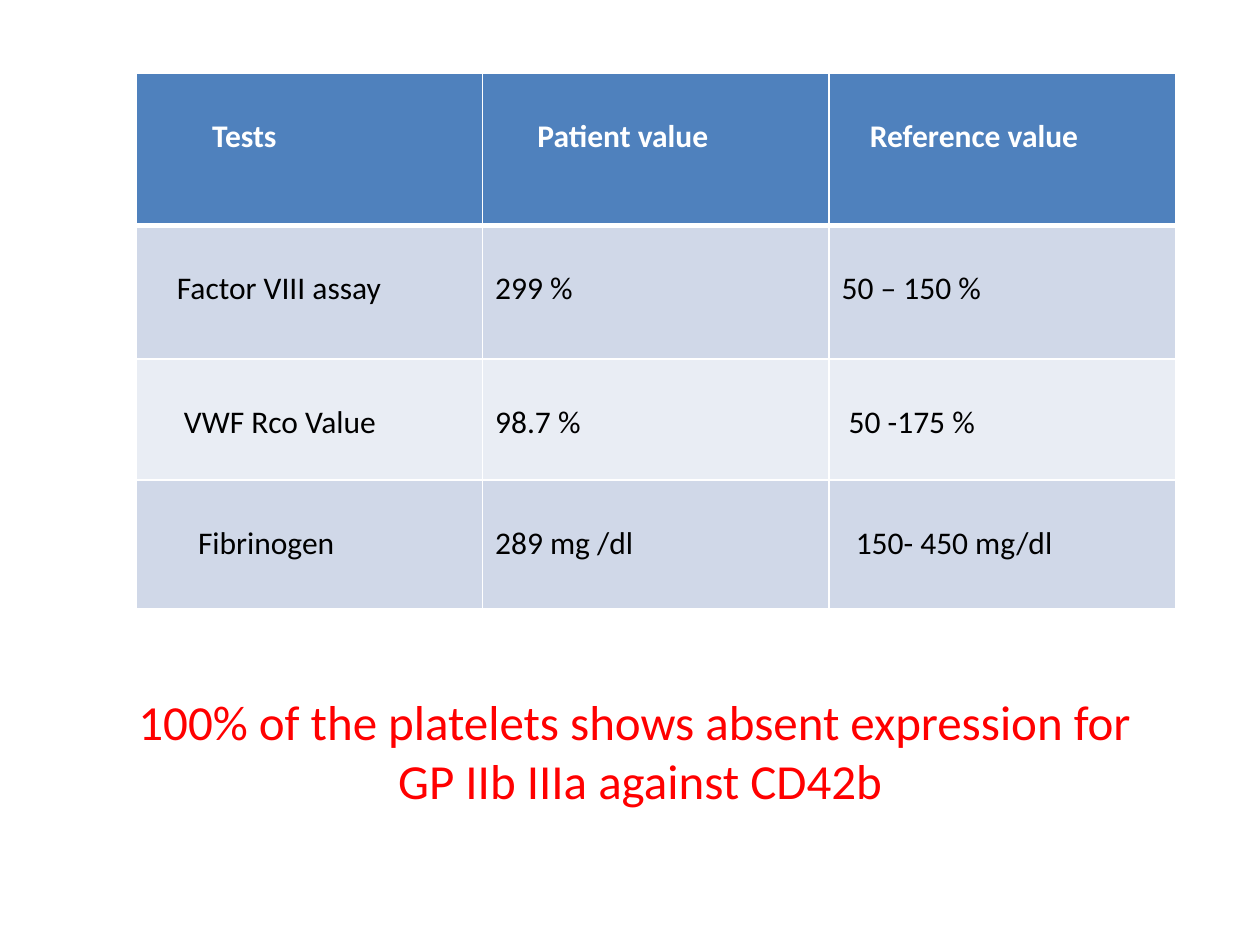
from lxml import etree
from pptx import Presentation
from pptx.dml.color import RGBColor
from pptx.enum.text import MSO_ANCHOR, PP_ALIGN
from pptx.oxml.ns import qn
from pptx.util import Inches, Pt

CENTER, MIDDLE = PP_ALIGN.CENTER, MSO_ANCHOR.MIDDLE
FONT = "Calibri"
TITLE_ONLY = 5
COLORS = {"header": "4F81BD", "odd": "D0D8E8", "even": "E9EDF4",
          "white": "FFFFFF", "black": "000000", "finding": "FF0000"}

ROW_HEIGHTS = [1.21, 1.06, 0.96, 1.02]
INDENT_STEP = 0.056
# Each cell: text and its indent in steps
TEST_ROWS = [
    [("Tests", 9), ("Patient value", 6), ("Reference value", 4)],
    [("Factor VIII assay", 4), ("299 %", 0), ("50 – 150 %", 0)],
    [("VWF Rco Value", 5), ("98.7 %", 0), ("50 -175 %", 1)],
    [("Fibrinogen", 7), ("289 mg /dl", 0), ("150- 450 mg/dl", 2)],
]


def rgb(name):
    return RGBColor.from_string(COLORS[name])


def set_font(para, size, color, bold=False):
    font = para.font
    font.name, font.size, font.bold = FONT, Pt(size), bold
    font.color.rgb = rgb(color)


def set_borders(cell, widths):
    """Draw white borders; widths maps the sides L, R, T, B to points."""
    properties = cell._tc.get_or_add_tcPr()
    for side, width in widths.items():
        line = etree.SubElement(properties, qn(f"a:ln{side}"), w=str(Pt(width)))
        fill = etree.SubElement(line, qn("a:solidFill"))
        etree.SubElement(fill, qn("a:srgbClr"), val=COLORS["white"])


def add_finding(page, left, top, width, height):
    title = page.shapes.title
    title.left, title.top = Inches(left), Inches(top)
    title.width, title.height = Inches(width), Inches(height)
    frame = title.text_frame
    frame.word_wrap = True
    frame.vertical_anchor = MIDDLE
    para = frame.paragraphs[0]
    para.alignment = CENTER
    para.add_run().text = "100% of the platelets shows absent expression for "
    para.add_line_break()
    para.add_run().text = "GP IIb IIIa against CD42b"
    set_font(para, 28, "finding")
    for span in para.runs:
        span.font.size = Pt(28)


def add_test_table(page, left, top, width, height):
    columns = len(TEST_ROWS[0])
    table = page.shapes.add_table(len(TEST_ROWS), columns, Inches(left), Inches(top),
                                  Inches(width), Inches(height)).table
    for column in table.columns:
        column.width = Inches(width / columns)
    for r, entries in enumerate(TEST_ROWS):
        table.rows[r].height = Inches(ROW_HEIGHTS[r])
        header = r == 0
        band = "header" if header else "odd" if r % 2 else "even"
        for c, (text, indent) in enumerate(entries):
            cell = table.cell(r, c)
            set_borders(cell, {"L": 1, "R": 1, "T": 3 if r == 1 else 1,
                               "B": 3 if header else 1})
            cell.fill.solid()
            cell.fill.fore_color.rgb = rgb(band)
            cell.margin_left = Inches(0.1 + indent * INDENT_STEP)
            cell.margin_top = Inches(0.35)
            cell.text = text
            set_font(cell.text_frame.paragraphs[0], 18,
                     "white" if header else "black", header)


def main():
    deck = Presentation()
    deck.slide_width, deck.slide_height = Inches(10), Inches(7.5)
    page = deck.slides.add_slide(deck.slide_layouts[TITLE_ONLY])
    # Finding below the table of test results
    add_finding(page, 0.58, 5.33, 9, 1.25)
    add_test_table(page, 1.08, 0.58, 8.25, sum(ROW_HEIGHTS))
    deck.save("out.pptx")


if __name__ == "__main__":
    main()
